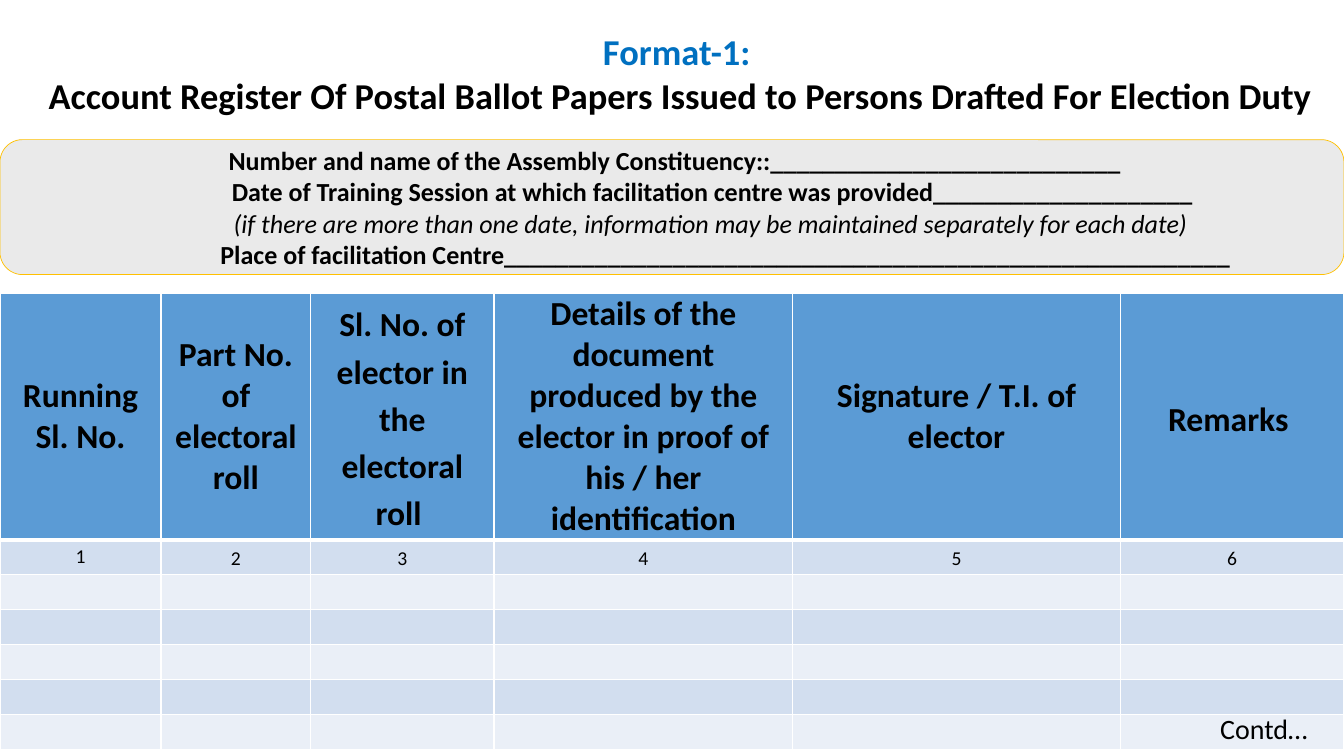
from lxml import etree
from pptx import Presentation
from pptx.dml.color import RGBColor
from pptx.enum.shapes import MSO_SHAPE
from pptx.enum.text import MSO_ANCHOR, PP_ALIGN
from pptx.oxml.ns import qn
from pptx.util import Cm, Pt

ROUND = MSO_SHAPE.ROUNDED_RECTANGLE
MIDDLE = MSO_ANCHOR.MIDDLE
CENTER, LEFT = PP_ALIGN.CENTER, PP_ALIGN.LEFT

COLORS = {
    "ink": "000000", "title": "0070C0", "panel": "EAEAEA", "edge": "FFC000",
    "head": "5B9BD5", "dark": "D2DEEF", "light": "EAEFF7", "rule": "FFFFFF",
}
FONT = "Calibri"
WIDTH, HEIGHT = 33.87, 19.05

# Text, left indent in cm, italic
FIELDS = [
    ("Number and name of the Assembly Constituency::" + "_" * 27, 0.15, False),
    ("Date of Training Session at which facilitation centre was provided"
     + "_" * 20, 2.05, False),
    ("(if there are more than one date, information may be maintained "
     "separately for each date)", 1.95, True),
    ("Place of facilitation Centre" + "_" * 56, 2.7, False),
]
# Heading, width in cm, line spacing
COLUMNS = [
    ("Running Sl. No.", 4.06, 1),
    ("Part No. of electoral roll", 3.77, 1),
    ("Sl. No. of elector in the electoral roll ", 4.62, 1.15),
    ("Details of the document produced by the elector in proof of his / her "
     "identification", 7.53, 1),
    ("Signature / T.I. of elector", 8.25, 1),
    ("Remarks ", 5.64, 1.15),
]
ROWS, HEAD_TALL, ROW_TALL = 7, 5.04, 0.88


def color(name):
    return RGBColor.from_string(COLORS[name])


def style(para, size, tint="ink", bold=False, italic=False, align=CENTER):
    para.alignment = align
    font = para.font
    font.name, font.size = FONT, Pt(size)
    font.bold, font.italic = bold, italic
    font.color.rgb = color(tint)


def place(shape, left, top, width, height):
    shape.left, shape.top = Cm(left), Cm(top)
    shape.width, shape.height = Cm(width), Cm(height)


def add_title(slide, *box):
    title = slide.shapes.title
    place(title, *box)
    frame = title.text_frame
    frame.word_wrap, frame.vertical_anchor = True, MIDDLE
    frame.text = ("Format-1: \nAccount Register Of Postal Ballot Papers "
                  "Issued to Persons Drafted For Election Duty")
    for para, tint in zip(frame.paragraphs, ("title", "ink")):
        style(para, 26, tint, bold=True)


def add_panel(slide, *box):
    panel = slide.shapes.add_shape(ROUND, *map(Cm, box))
    panel.shadow.inherit = False
    panel.fill.solid()
    panel.fill.fore_color.rgb = color("panel")
    panel.line.color.rgb = color("edge")
    panel.line.width = Pt(0.5)
    frame = panel.text_frame
    frame.word_wrap, frame.vertical_anchor = True, MIDDLE
    frame.text = "\n".join(text for text, _, _ in FIELDS)
    for para, (_, indent, italic) in zip(frame.paragraphs, FIELDS):
        style(para, 18.6, bold=not italic, italic=italic)
        props = para._p.get_or_add_pPr()
        props.set("marL", str(Cm(indent)))
        props.set("indent", "0")


def add_rules(cell, top, bottom):
    """Draw the four cell borders; top and bottom are widths in points."""
    props = cell._tc.get_or_add_tcPr()
    for side, width in (("L", 1), ("R", 1), ("T", top), ("B", bottom)):
        line = etree.SubElement(props, qn(f"a:ln{side}"), w=str(Pt(width)))
        fill = etree.SubElement(line, qn("a:solidFill"))
        etree.SubElement(fill, qn("a:srgbClr"), val=COLORS["rule"])


def fill_cell(cell, row, col):
    heading, _, spacing = COLUMNS[col]
    add_rules(cell, 3 if row == 1 else 1, 3 if row == 0 else 1)
    cell.fill.solid()
    band = "head" if row == 0 else "dark" if row % 2 else "light"
    cell.fill.fore_color.rgb = color(band)
    cell.vertical_anchor = MIDDLE
    cell.margin_top = cell.margin_bottom = 0
    if row > 1:
        return
    cell.text = str(col + 1) if row else heading
    para = cell.text_frame.paragraphs[0]
    style(para, 14 if row else 24, bold=row == 0)
    if row:
        spacing = 1.15 if col else 1
    para.line_spacing = spacing


def add_register(slide, *box):
    frame = slide.shapes.add_table(ROWS, len(COLUMNS), *map(Cm, box))
    table = frame.table
    for column, (_, width, _) in zip(table.columns, COLUMNS):
        column.width = Cm(width)
    for row, line in enumerate(table.rows):
        line.height = Cm(ROW_TALL if row else HEAD_TALL)
        for col, cell in enumerate(line.cells):
            fill_cell(cell, row, col)


def add_footer(slide, *box):
    frame = slide.shapes.add_textbox(*map(Cm, box)).text_frame
    frame.word_wrap = False
    frame.text = "Contd…"
    style(frame.paragraphs[0], 20, align=LEFT)


def main():
    deck = Presentation()
    deck.slide_width, deck.slide_height = Cm(WIDTH), Cm(HEIGHT)
    slide = deck.slides.add_slide(deck.slide_layouts[5])
    add_title(slide, 0.45, 0.58, 33.42, 2.5)
    add_panel(slide, 0, 3.52, WIDTH, 3.4)
    add_register(slide, 0, 7.4, WIDTH, HEAD_TALL + (ROWS - 1) * ROW_TALL)
    add_footer(slide, 30.5, 17.8, 2.72, 1.12)
    deck.save("out.pptx")


if __name__ == "__main__":
    main()
